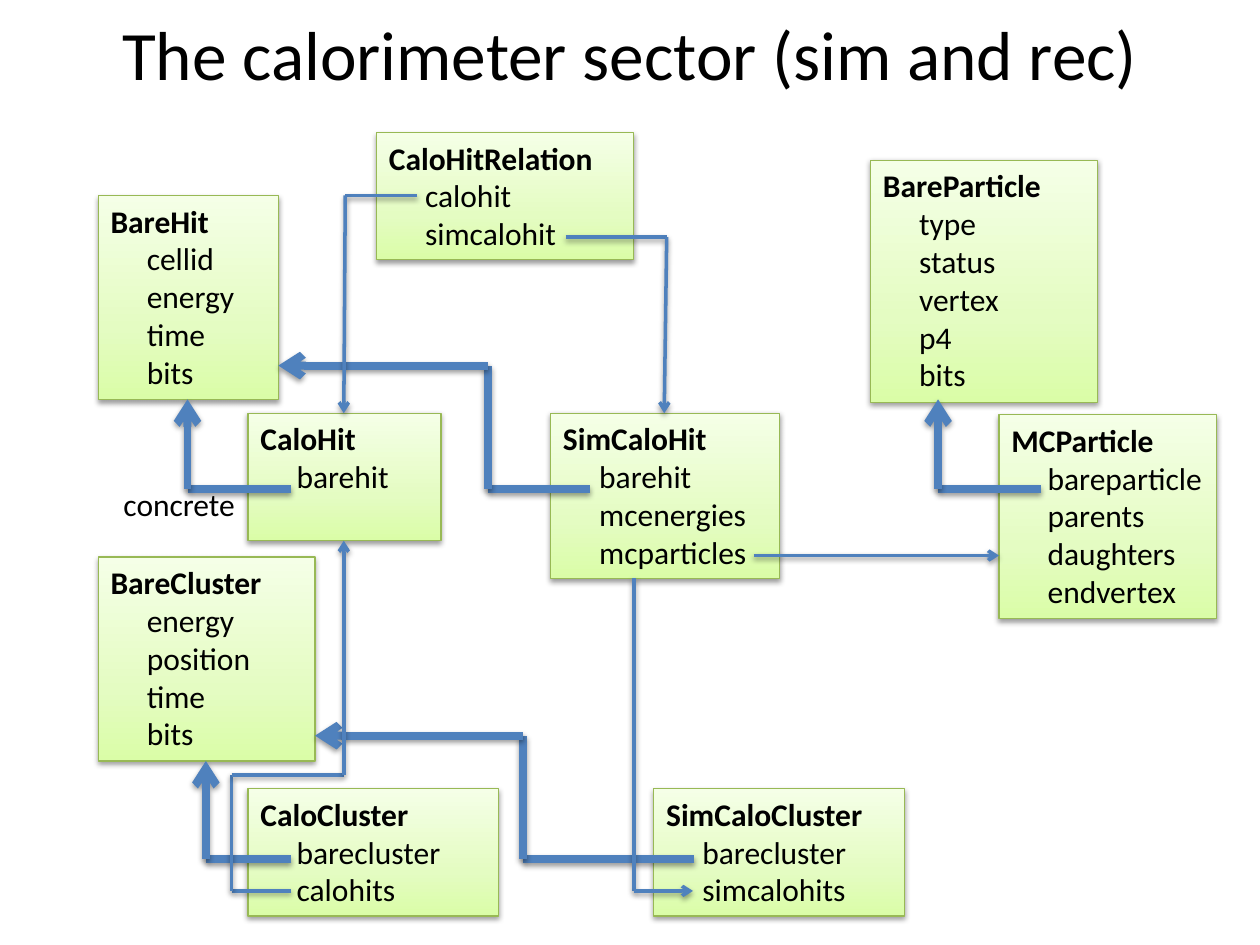
from pptx import Presentation
from pptx.dml.color import RGBColor
from pptx.enum.shapes import MSO_CONNECTOR, MSO_SHAPE
from pptx.enum.text import MSO_ANCHOR, PP_ALIGN
from pptx.oxml import parse_xml
from pptx.oxml.ns import nsdecls
from pptx.util import Cm, Pt

BLACK = RGBColor(0x00, 0x00, 0x00)
BLUE = RGBColor(0x4F, 0x81, 0xBD)
GREEN = RGBColor(0x98, 0xB9, 0x55)
GRADIENT = (
    (0, RGBColor(0xDA, 0xFD, 0xA7)),
    (35, RGBColor(0xE4, 0xFC, 0xC2)),
    (100, RGBColor(0xF5, 0xFF, 0xE7)),
)
THICK, THIN = 4.5, 2

# name, (left, top, width, height) in cm, members
CLASSES = [
    ("BareHit", (1.98, 3.94, 3.63, 4.11), ["cellid", "energy", "time", "bits"]),
    ("CaloHit", (5, 8.33, 3.89, 2.57), ["barehit"]),
    ("CaloCluster", (5, 15.9, 5.05, 2.57), ["barecluster", "calohits"]),
    ("BareCluster", (1.98, 11.23, 4.37, 4.11), ["energy", "position", "time", "bits"]),
    ("SimCaloHit", (11.1, 8.33, 4.62, 3.33), ["barehit", "mcenergies", "mcparticles"]),
    ("BareParticle", (17.55, 3.23, 4.57, 4.88),
     ["type", "status", "vertex", "p4", "bits"]),
    ("MCParticle", (20.14, 8.36, 4.39, 4.11),
     ["bareparticle", "parents", "daughters", "endvertex"]),
    ("SimCaloCluster", (13.18, 15.9, 5.05, 2.57), ["barecluster", "simcalohits"]),
    ("CaloHitRelation", (7.59, 2.67, 5.18, 2.57), ["calohit", "simcalohit"]),
]

# line width, corner points in cm from the member to the class it refers to
REFERENCES = [
    (THICK, [(5.87, 9.86), (3.78, 9.86), (3.78, 8.05)]),
    (THICK, [(5.87, 17.32), (4.15, 17.32), (4.15, 15.34)]),
    (THICK, [(20.98, 9.86), (18.91, 9.86), (18.91, 8.05)]),
    (THICK, [(11.89, 9.86), (9.83, 9.86), (9.83, 7.37), (5.61, 7.37)]),
    (THICK, [(14, 17.32), (10.54, 17.32), (10.54, 14.83), (6.35, 14.83)]),
    (THIN, [(5.87, 17.96), (4.67, 17.96), (4.67, 15.62), (6.93, 15.62), (6.93, 10.9)]),
    (THIN, [(15.19, 11.2), (20.14, 11.2)]),
    (THIN, [(12.78, 11.66), (12.78, 17.96), (13.97, 17.96)]),
    (THIN, [(8.41, 3.94), (6.96, 3.94), (6.93, 8.33)]),
    (THIN, [(11.4, 4.78), (13.44, 4.78), (13.39, 8.33)]),
]


class Diagram:
    font = "Calibri"
    size = 18
    indent = Cm(0.73)

    def __init__(self, slide):
        self.slide = slide

    def run(self, p, text, size=None, bold=False):
        r = p.add_run()
        r.text = text
        r.font.name = self.font
        r.font.size = Pt(size or self.size)
        r.font.bold = bold
        r.font.color.rgb = BLACK

    def shadow(self, sp):
        sp.element.spPr.append(parse_xml(
            f'<a:effectLst {nsdecls("a")}>'
            f'<a:outerShdw blurRad="{Pt(3.1)}" dist="{Pt(1.6)}" dir="5400000" '
            'rotWithShape="0"><a:srgbClr val="000000"><a:alpha val="38000"/>'
            '</a:srgbClr></a:outerShdw></a:effectLst>'))

    def gradient(self, sp):
        """Fill with the three-stop gradient, rising from the bottom edge."""
        stops = "".join(
            f'<a:gs pos="{pos * 1000}"><a:srgbClr val="{color}"/></a:gs>'
            for pos, color in GRADIENT)
        fill = parse_xml(
            f'<a:gradFill {nsdecls("a")} rotWithShape="1"><a:gsLst>{stops}</a:gsLst>'
            '<a:lin ang="16200000" scaled="0"/></a:gradFill>')
        sp.element.spPr.prstGeom.addnext(fill)

    def label(self, text, box, size=None, align=PP_ALIGN.LEFT, anchor=MSO_ANCHOR.TOP):
        sp = self.slide.shapes.add_textbox(*map(Cm, box))
        tf = sp.text_frame
        tf.word_wrap = True
        tf.vertical_anchor = anchor
        p = tf.paragraphs[0]
        p.alignment = align
        self.run(p, text, size)

    def class_box(self, name, box, members):
        sp = self.slide.shapes.add_shape(MSO_SHAPE.RECTANGLE, *map(Cm, box))
        self.gradient(sp)
        sp.line.color.rgb = GREEN
        sp.line.width = Pt(0.75)
        self.shadow(sp)
        tf = sp.text_frame
        tf.word_wrap = True
        tf.vertical_anchor = MSO_ANCHOR.TOP
        p = tf.paragraphs[0]
        p.alignment = PP_ALIGN.LEFT
        self.run(p, name, bold=True)
        for member in members:
            p = tf.add_paragraph()
            p.alignment = PP_ALIGN.LEFT
            p._p.get_or_add_pPr().set("marL", str(self.indent))
            self.run(p, member)

    def reference(self, width, points):
        """Join the points with straight lines, the last one with an arrowhead."""
        for start, end in zip(points, points[1:]):
            line = self.slide.shapes.add_connector(
                MSO_CONNECTOR.STRAIGHT, *map(Cm, start + end))
            line.line.color.rgb = BLUE
            line.line.width = Pt(width)
            self.shadow(line)
        line.line._get_or_add_ln().append(
            parse_xml(f'<a:tailEnd {nsdecls("a")} type="arrow"/>'))


def main():
    prs = Presentation()
    prs.slide_width, prs.slide_height = Cm(25.4), Cm(19.05)
    diagram = Diagram(prs.slides.add_slide(prs.slide_layouts[6]))
    diagram.label("The calorimeter sector (sim and rec)", (1.27, 0, 22.86, 2.11),
                  39.6, PP_ALIGN.CENTER, MSO_ANCHOR.MIDDLE)
    for name, box, members in CLASSES:
        diagram.class_box(name, box, members)
    for width, points in REFERENCES:
        diagram.reference(width, points)
    diagram.label("concrete", (2.24, 9.65, 4.75, 1.02))
    prs.save("out.pptx")


if __name__ == "__main__":
    main()
